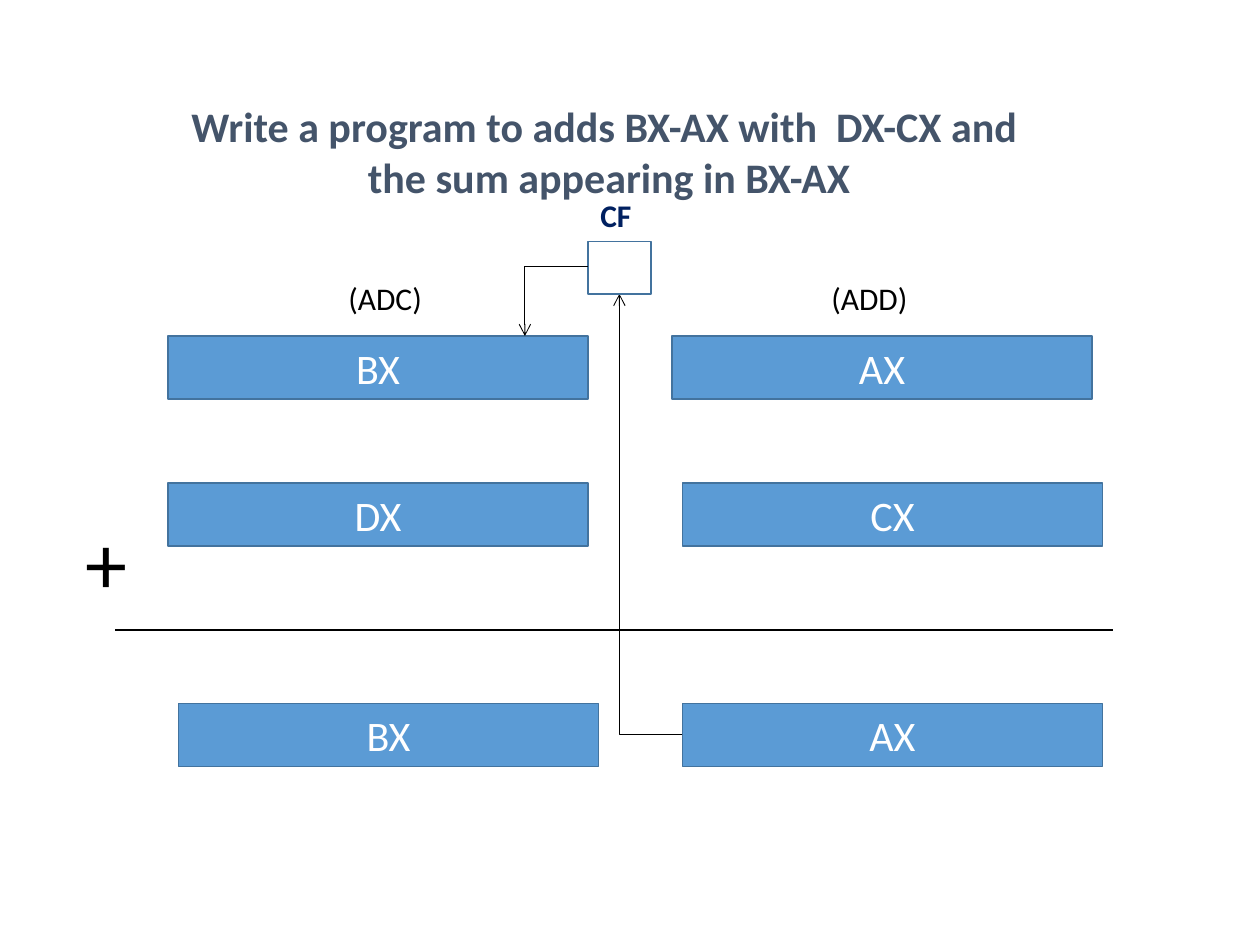
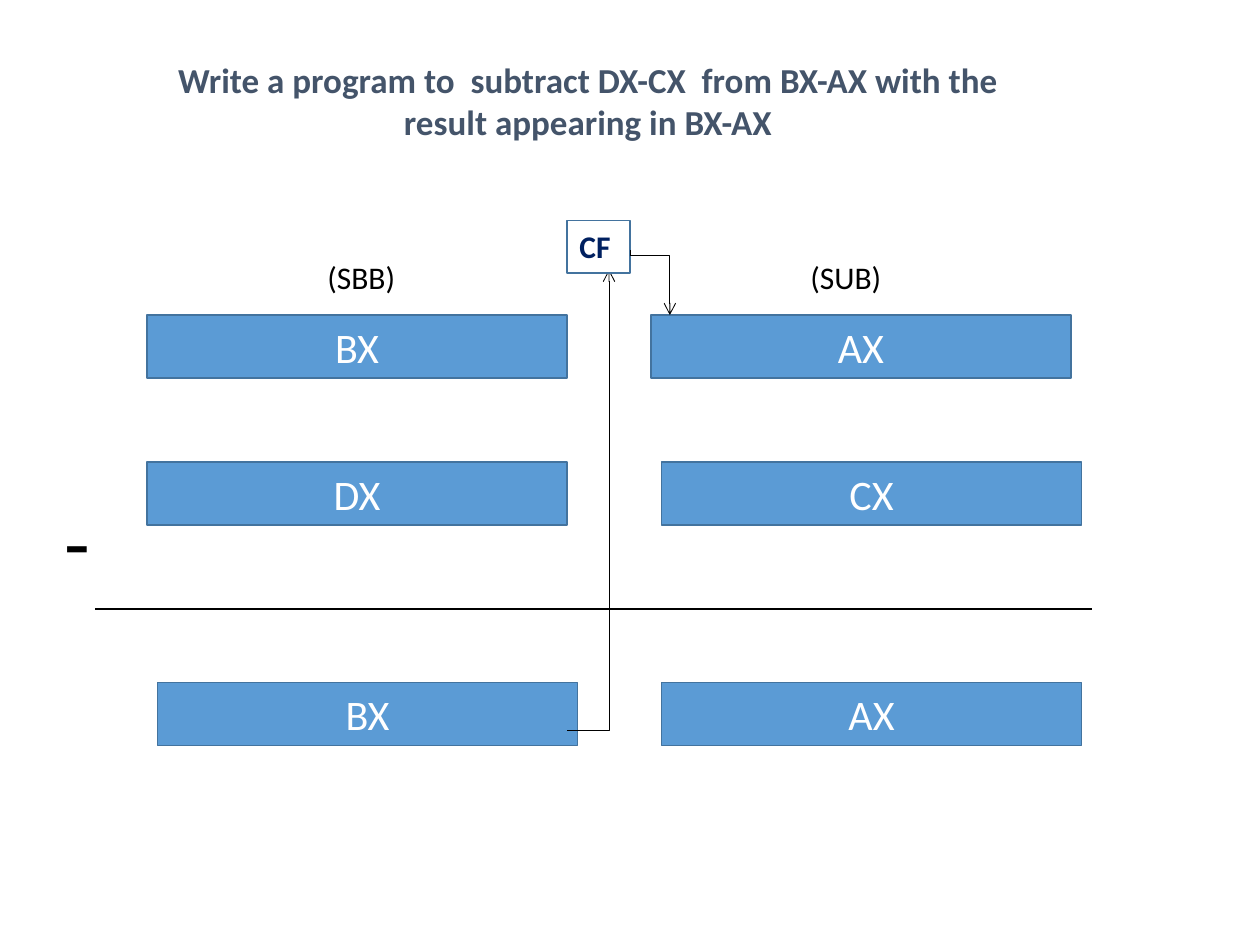
from lxml import etree
from pptx import Presentation
from pptx import util as u
from pptx.dml.color import RGBColor
from pptx.enum import shapes, text
from pptx.oxml import ns

PX = 7620  # EMU per px, 120 px to the inch
BLUE = RGBColor(0x5B, 0x9B, 0xD5)
EDGE = RGBColor(0x43, 0x73, 0x9E)
NAVY = RGBColor(0x00, 0x20, 0x60)
SLATE = RGBColor(0x44, 0x54, 0x6A)
BLACK = RGBColor(0, 0, 0)
WHITE = RGBColor(255, 255, 255)
LEFT, CENTER = text.PP_ALIGN.LEFT, text.PP_ALIGN.CENTER


class Deck:
    """Holds the style, the current slide and the shift of its diagram."""

    font = "Calibri"

    def __init__(self):
        self.prs = Presentation()
        self.prs.slide_width, self.prs.slide_height = 1200 * PX, 900 * PX

    def new_slide(self, shift):
        self.s = self.prs.slides.add_slide(self.prs.slide_layouts[6])
        self.shift = shift

    def emu(self, *lengths):
        return [u.Emu(n * PX) for n in lengths]

    def place(self, *coords):
        return self.emu(*(n + self.shift for n in coords))

    def set_text(self, sp, words, size, color, bold=False, align=LEFT):
        tf = sp.text_frame
        tf.word_wrap = True
        p = tf.paragraphs[0]
        p.text, p.alignment = words, align
        f = p.font
        f.name, f.size, f.bold = self.font, u.Pt(size), bold
        f.color.rgb = color

    def title(self, words, x, y, h, size):
        sp = self.s.shapes.add_textbox(*self.emu(x, y, 860, h))
        self.set_text(sp, words, size, SLATE, True, CENTER)

    def label(self, words, x, y, w, h, size=18, color=BLACK, bold=False):
        sp = self.s.shapes.add_textbox(*self.place(x, y), *self.emu(w, h))
        self.set_text(sp, words, size, color, bold)

    def box(self, x, y, w, h, fill, words=None):
        sp = self.s.shapes.add_shape(
            shapes.MSO_SHAPE.RECTANGLE, *self.place(x, y), *self.emu(w, h))
        sp.shadow.inherit = False
        sp.fill.solid()
        sp.fill.fore_color.rgb = fill
        sp.line.color.rgb, sp.line.width = EDGE, u.Pt(1)
        if words:
            sp.text_frame.vertical_anchor = text.MSO_ANCHOR.MIDDLE
            self.set_text(sp, words, 24, WHITE, align=CENTER)

    def line(self, x1, y1, x2, y2, width=1, kind=shapes.MSO_CONNECTOR.STRAIGHT):
        c = self.s.shapes.add_connector(kind, *self.place(x1, y1, x2, y2))
        c.line.color.rgb, c.line.width = BLACK, u.Pt(width)
        etree.SubElement(c._element.spPr, ns.qn("a:effectLst"))
        return c

    def arrow(self, x1, y1, x2, y2):
        """One-bend arrow: first across, then up or down."""
        c = self.line(x1, y1, x2, y2, 0.5, shapes.MSO_CONNECTOR.ELBOW)
        spPr = c._element.spPr
        spPr.find(ns.qn("a:prstGeom")).set("prst", "bentConnector2")
        etree.SubElement(spPr.find(ns.qn("a:ln")), ns.qn("a:tailEnd"), type="arrow")

    def diagram(self, sign, sign_w, high_op, low_op, carry, flag, flag_y):
        """Register pairs above a sum line, with the carry flag between them."""
        for name, x, y in REGISTERS:
            self.box(x, y, 400, 60, BLUE, name)
        self.line(1060, 600, 110, 600)
        self.label(sign, 70, 480, sign_w, 109, 48)
        self.label(high_op, 320, 260, 100, 48)
        self.label(low_op, 780, 260, 100, 48)
        # Carry flag: arrow in, box, arrow out
        self.arrow(*carry)
        self.box(560, 230, 60, 50, WHITE)
        self.arrow(*flag)
        self.label("CF", 560, flag_y, 60, 85, 18, NAVY, True)


REGISTERS = [
    ("BX", 160, 320), ("AX", 640, 320),
    ("DX", 160, 460), ("CX", 650, 460),
    ("BX", 170, 670), ("AX", 650, 670),
]


def main():
    d = Deck()

    # Addition
    d.new_slide(0)
    d.diagram("+", 65, "(ADC)", "(ADD)", carry=(650, 700, 590, 280),
              flag=(560, 254, 500, 320), flag_y=181)
    d.title("Write a program to adds BX-AX with  DX-CX and  the sum appearing in BX-AX",
            150, 90, 109, 24)

    # Subtraction
    d.new_slide(-20)
    d.title("Write a program to  subtract DX-CX  from BX-AX with the result appearing in BX-AX",
            130, 50, 92, 20)
    d.diagram("-", 49, "(SBB)", "(SUB)", carry=(560, 716, 600, 277),
              flag=(620, 263, 658, 320), flag_y=230)
    d.line(620, 258, 620, 263, 0.5)

    d.prs.save("out.pptx")


if __name__ == "__main__":
    main()
